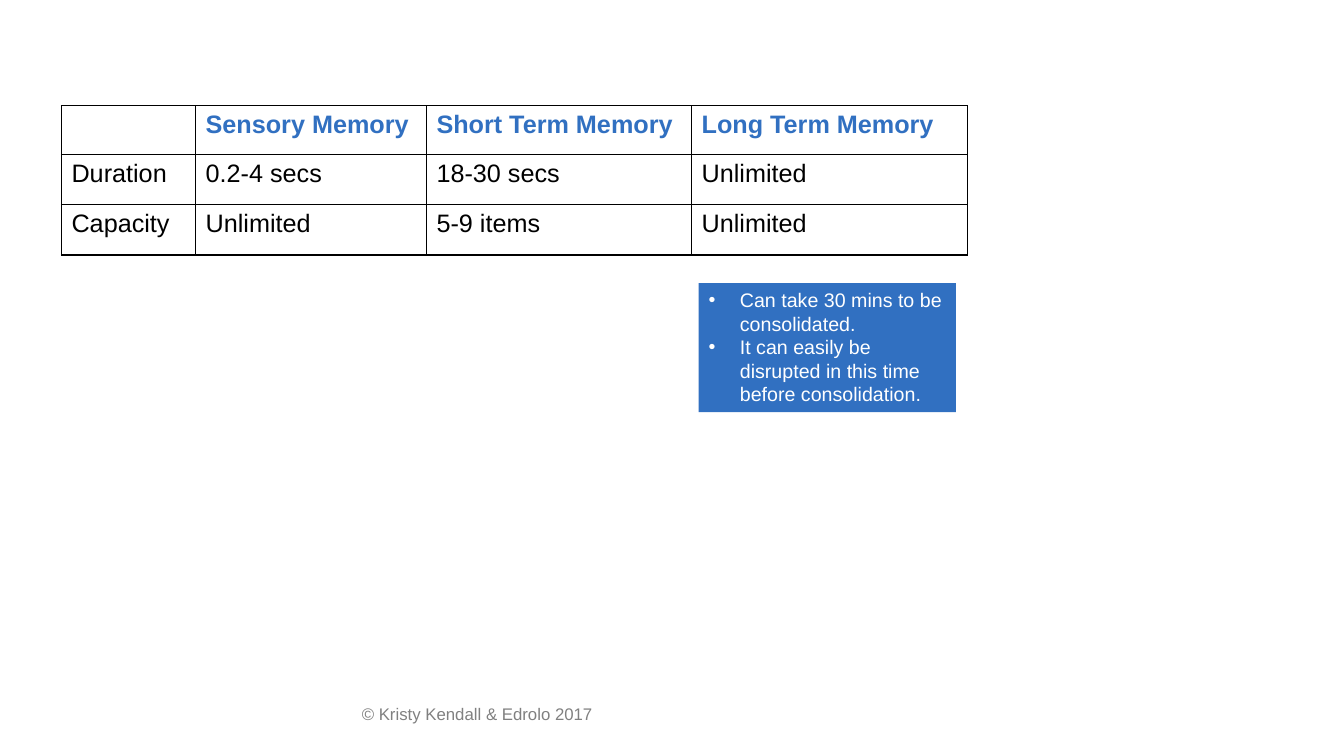
from lxml.etree import SubElement
from pptx import Presentation
from pptx.dml.color import RGBColor
from pptx.enum.shapes import MSO_SHAPE
from pptx.enum.text import MSO_ANCHOR, PP_ALIGN
from pptx.oxml.ns import qn
from pptx.util import Inches, Pt

COLORS = {"blue": "3170C1", "black": "000000", "white": "FFFFFF", "gray": "808080"}
MEMORY_ROWS = [
    ["", "Sensory Memory", "Short Term Memory", "Long Term Memory"],
    ["Duration", "0.2-4 secs", "18-30 secs", "Unlimited"],
    ["Capacity", "Unlimited", "5-9 items", "Unlimited"],
]
COLUMN_WIDTHS = [1.33, 2.29, 2.63, 2.74]
ROW_HEIGHTS = [0.48, 0.5, 0.5]
TABLE_ORIGIN = (0.61, 1.05)
CONSOLIDATION_NOTES = [
    "Can take 30 mins to be consolidated.",
    "It can easily be disrupted in this time before consolidation.",
]
NOTES_BOX = (6.93, 2.81, 2.55, 1.28)
COPYRIGHT = "© Kristy Kendall & Edrolo 2017"
COPYRIGHT_BOX = (3.49, 6.93, 4.5, 0.4)
BULLET_INDENT = 0.31
BORDER_WIDTH = 1
FORMATS = {
    "heading": {"size": Pt(18), "bold": True, "color": "blue"},
    "body": {"size": Pt(18), "bold": False, "color": "black"},
    "note": {"size": Pt(14), "bold": False, "color": "white"},
    "copyright": {"size": Pt(12), "bold": False, "color": "gray"},
}


def color(name):
    return RGBColor.from_string(COLORS[name])


def write(para, text, style):
    span = para.add_run()
    span.text = text
    span.font.name = "Arial"
    for key, value in FORMATS[style].items():
        if key == "color":
            span.font.color.rgb = color(value)
        else:
            setattr(span.font, key, value)


def add_bullet(para):
    properties = para._p.get_or_add_pPr()
    indent = Inches(BULLET_INDENT)
    properties.set("marL", str(indent))
    properties.set("indent", str(-indent))
    SubElement(properties, qn("a:buFont"), typeface="Arial")
    SubElement(properties, qn("a:buChar"), char="•")


def add_borders(cell):
    properties = cell._tc.get_or_add_tcPr()
    for side in ("lnL", "lnR", "lnT", "lnB"):
        line = SubElement(properties, qn(f"a:{side}"), w=str(Pt(BORDER_WIDTH)))
        fill = SubElement(line, qn("a:solidFill"))
        SubElement(fill, qn("a:srgbClr"), val=COLORS["black"])


def add_memory_table(page):
    size = (sum(COLUMN_WIDTHS), sum(ROW_HEIGHTS))
    frame = page.shapes.add_table(
        len(MEMORY_ROWS), len(COLUMN_WIDTHS), *map(Inches, TABLE_ORIGIN + size)
    )
    table = frame.table
    table.first_row = table.horz_banding = False
    for column, width in zip(table.columns, COLUMN_WIDTHS):
        column.width = Inches(width)
    for row, height in zip(table.rows, ROW_HEIGHTS):
        row.height = Inches(height)
    for row_index, texts in enumerate(MEMORY_ROWS):
        style = "body" if row_index else "heading"
        for column_index, text in enumerate(texts):
            cell = table.cell(row_index, column_index)
            add_borders(cell)
            cell.fill.background()
            if text:
                write(cell.text_frame.paragraphs[0], text, style)


def add_consolidation_notes(page):
    box = page.shapes.add_shape(MSO_SHAPE.RECTANGLE, *map(Inches, NOTES_BOX))
    box.shadow.inherit = False
    box.fill.solid()
    box.fill.fore_color.rgb = color("blue")
    box.line.fill.background()
    frame = box.text_frame
    frame.word_wrap = True
    frame.vertical_anchor = MSO_ANCHOR.TOP
    for index, text in enumerate(CONSOLIDATION_NOTES):
        para = frame.add_paragraph() if index else frame.paragraphs[0]
        para.alignment = PP_ALIGN.LEFT
        add_bullet(para)
        write(para, text, "note")


def add_copyright(page):
    box = page.shapes.add_textbox(*map(Inches, COPYRIGHT_BOX))
    box.text_frame.word_wrap = True
    write(box.text_frame.paragraphs[0], COPYRIGHT, "copyright")


def main():
    """Build the memory store comparison slide."""
    deck = Presentation()
    deck.slide_width = Inches(13.33)
    deck.slide_height = Inches(7.5)
    page = deck.slides.add_slide(deck.slide_layouts[6])
    add_copyright(page)
    add_memory_table(page)
    add_consolidation_notes(page)
    deck.save("out.pptx")


if __name__ == "__main__":
    main()
